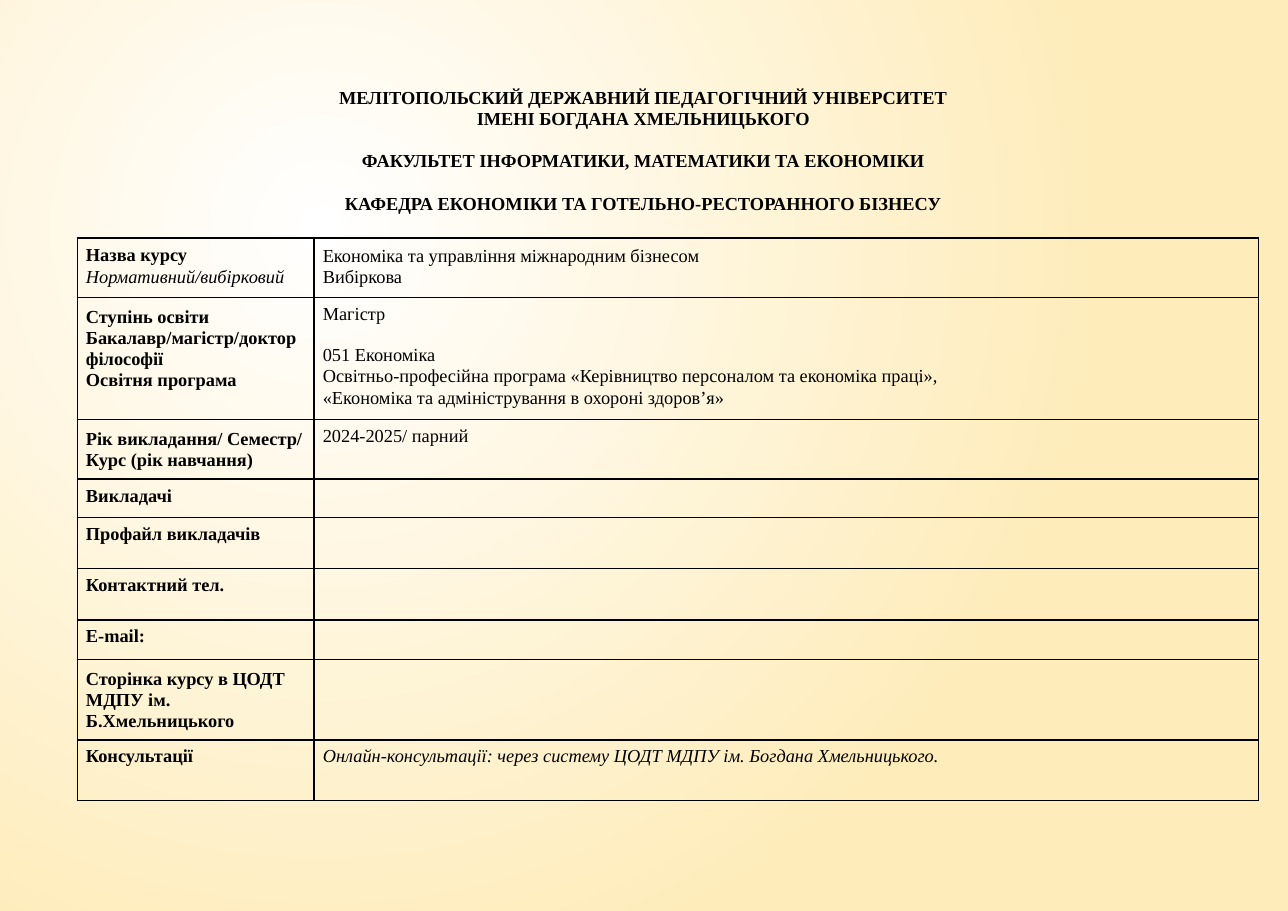
from dataclasses import dataclass

from lxml.etree import SubElement
from pptx import Presentation
from pptx.dml.color import RGBColor
from pptx.enum.text import MSO_ANCHOR, MSO_AUTO_SIZE, PP_ALIGN
from pptx.oxml import parse_xml
from pptx.oxml.ns import nsdecls, qn
from pptx.util import Emu, Inches, Pt


@dataclass(frozen=True)
class Theme:
    font: str = "Times New Roman"
    size: Pt = Pt(12)
    ink: str = "000000"
    glow: str = "FFFFFF"
    sand: str = "FEECBA"
    border: Pt = Pt(1)
    leading: Pt = Pt(13.8)
    double_leading: Pt = Pt(27.6)


@dataclass(frozen=True)
class Line:
    text: str
    bold: bool = False
    italic: bool = False
    leading: Pt | None = None
    after: Pt = Pt(0)


@dataclass(frozen=True)
class Row:
    height: float  # percent of slide height
    label: tuple[Line, ...]
    value: tuple[Line, ...] = ()
    label_top: float = 0.06
    value_top: float = 0.06


THEME = Theme()
WIDTH, HEIGHT = Inches(11.69), Inches(8.27)
COLUMNS = (18.39, 73.31)  # percent of slide width
INDENT = Inches(0.08)

HEADING = (
    Line("МЕЛІТОПОЛЬСКИЙ ДЕРЖАВНИЙ ПЕДАГОГІЧНИЙ УНІВЕРСИТЕТ\vІМЕНІ БОГДАНА ХМЕЛЬНИЦЬКОГО",
         bold=True, leading=THEME.leading),
    Line("ФАКУЛЬТЕТ ІНФОРМАТИКИ, МАТЕМАТИКИ ТА ЕКОНОМІКИ\v"
         "КАФЕДРА ЕКОНОМІКИ ТА ГОТЕЛЬНО-РЕСТОРАННОГО БІЗНЕСУ",
         bold=True, leading=THEME.double_leading),
)

ROWS = (
    Row(6.53,
        (Line("Назва курсу", bold=True, leading=Pt(14)),
         Line("Нормативний/вибірковий", italic=True, leading=Pt(14))),
        (Line("Економіка та управління міжнародним бізнесом\vВибіркова",
              leading=THEME.leading),),
        value_top=0.07),
    Row(13.42,
        (Line("Ступінь освіти\vБакалавр/магістр/доктор\vфілософії", bold=True,
              leading=THEME.leading),
         Line("Освітня програма", bold=True, leading=Pt(13.4))),
        (Line("Магістр", after=Pt(13)),
         Line("051 Економіка", leading=Pt(14.1)),
         Line("Освітньо-професійна програма «Керівництво персоналом та економіка праці»,",
              leading=THEME.leading),
         Line("«Економіка та адміністрування в охороні здоров’я»", leading=Pt(14.1))),
        label_top=0.08),
    Row(6.53,
        (Line("Рік викладання/ Семестр/\vКурс (рік навчання)", bold=True,
              leading=THEME.leading),),
        (Line("2024-2025/ парний"),),
        label_top=0.08),
    Row(4.23, (Line("Викладачі", bold=True),)),
    Row(5.56, (Line("Профайл викладачів", bold=True),)),
    Row(5.68, (Line("Контактний тел.", bold=True),)),
    Row(4.35, (Line("E-mail:", bold=True),)),
    Row(8.83,
        (Line("Сторінка курсу в ЦОДТ\vМДПУ ім.", bold=True, leading=THEME.leading),
         Line("Б.Хмельницького", bold=True, leading=Pt(13.4))),
        label_top=0.08),
    Row(6.65,
        (Line("Консультації", bold=True),),
        (Line("Онлайн-консультації: через систему ЦОДТ МДПУ ім. Богдана Хмельницького.",
              italic=True),)),
)


def across(percent: float) -> Emu:
    return Emu(round(WIDTH * percent / 100))


def down(percent: float) -> Emu:
    return Emu(round(HEIGHT * percent / 100))


def write(tf, lines: tuple[Line, ...], align: PP_ALIGN) -> None:
    for i, line in enumerate(lines):
        p = tf.paragraphs[0] if i == 0 else tf.add_paragraph()
        p.text = line.text
        p.alignment = align
        p.space_before, p.space_after = Pt(0), line.after
        p.line_spacing = line.leading or 1.0
        p.font.name, p.font.size = THEME.font, THEME.size
        p.font.bold, p.font.italic = line.bold, line.italic
        p.font.color.rgb = RGBColor.from_string(THEME.ink)


def paint_background(s) -> None:
    fill = s.background.fill
    fill.gradient()
    for stop, color in zip(fill.gradient_stops, (THEME.glow, THEME.sand)):
        stop.color.rgb = RGBColor.from_string(color)
    grad = s.element.find(".//" + qn("a:gradFill"))
    grad.remove(grad.find(qn("a:lin")))
    circle = SubElement(grad, qn("a:path"), path="circle")
    SubElement(circle, qn("a:fillToRect"), l="50000", t="50000", r="100000", b="100000")


def add_heading(s) -> None:
    sp = s.shapes.title
    sp.left, sp.top = across(26.09), down(9.19)
    sp.width, sp.height = across(47.73), down(14.39)
    tf = sp.text_frame
    tf.word_wrap, tf.auto_size = True, MSO_AUTO_SIZE.NONE
    tf.vertical_anchor = MSO_ANCHOR.TOP
    tf.margin_left = tf.margin_right = tf.margin_bottom = 0
    tf.margin_top = Inches(0.03)
    write(tf, HEADING, PP_ALIGN.CENTER)


def outline(cell) -> None:
    tc_pr = cell._tc.get_or_add_tcPr()
    for i, side in enumerate("LRTB"):
        tc_pr.insert(i, parse_xml(
            f'<a:ln{side} {nsdecls("a")} w="{THEME.border}"><a:solidFill>'
            f'<a:srgbClr val="{THEME.ink}"/></a:solidFill></a:ln{side}>'))


def fill_cell(cell, lines: tuple[Line, ...], top: float) -> None:
    cell.margin_left, cell.margin_top = INDENT, Inches(top)
    cell.margin_right = cell.margin_bottom = 0
    cell.fill.background()
    outline(cell)
    write(cell.text_frame, lines or (Line("", leading=THEME.leading),), PP_ALIGN.LEFT)


def add_course_table(s) -> None:
    table = s.shapes.add_table(
        len(ROWS), len(COLUMNS), across(5.99), down(26.12),
        across(sum(COLUMNS)), down(sum(row.height for row in ROWS))).table
    table.first_row = table.horz_banding = False
    for column, width in zip(table.columns, COLUMNS):
        column.width = across(width)
    for i, row in enumerate(ROWS):
        table.rows[i].height = down(row.height)
        fill_cell(table.cell(i, 0), row.label, row.label_top)
        fill_cell(table.cell(i, 1), row.value, row.value_top)


def main() -> None:
    prs = Presentation()
    prs.slide_width, prs.slide_height = WIDTH, HEIGHT
    s = prs.slides.add_slide(prs.slide_layouts[5])

    # Background, heading and course table
    paint_background(s)
    add_heading(s)
    add_course_table(s)

    prs.save("out.pptx")


if __name__ == "__main__":
    main()
